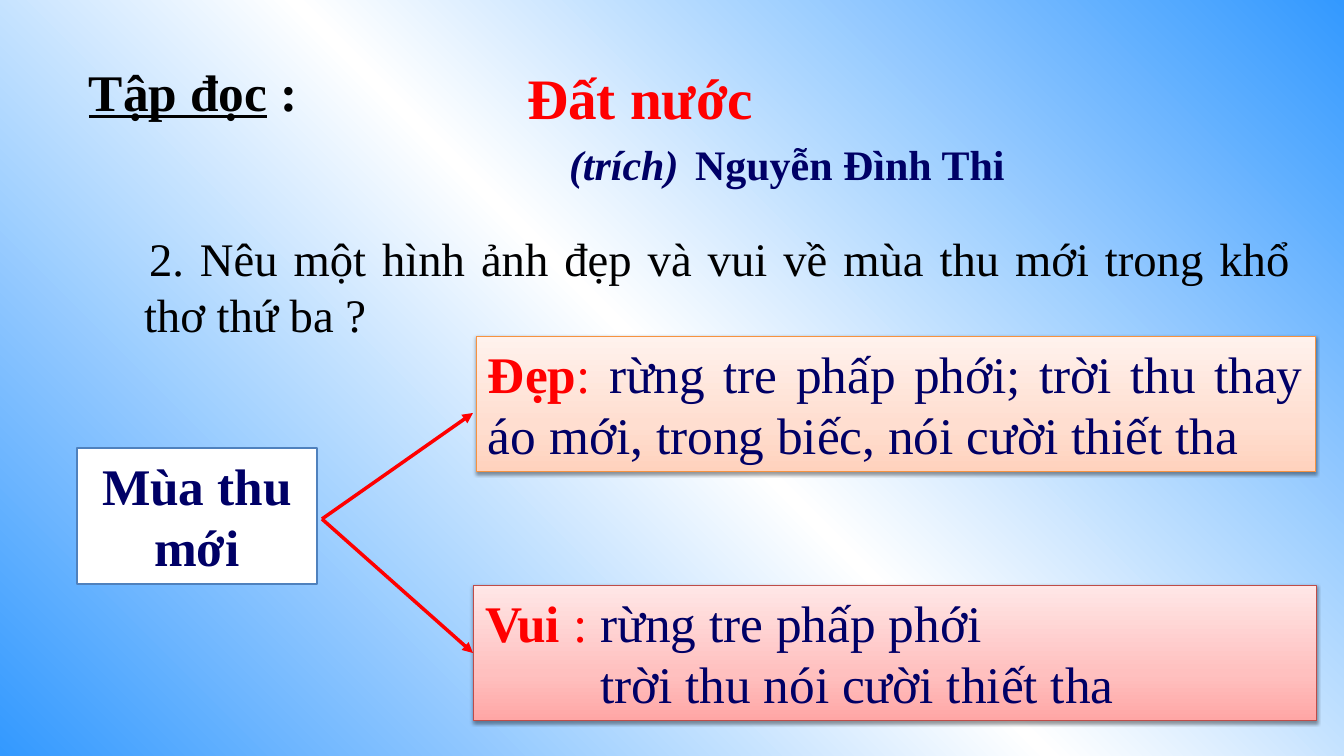
from copy import deepcopy
from lxml import etree
from pptx import Presentation
from pptx import util as u
from pptx.dml.color import RGBColor
from pptx.enum import shapes, text
from pptx.oxml.ns import qn

PX = u.Inches(1) / 84
FONT = "Times New Roman"
BLACK = RGBColor(0, 0, 0)
WHITE = RGBColor(255, 255, 255)
RED = RGBColor(255, 0, 0)
NAVY = RGBColor(0, 0, 0x66)
SKY = RGBColor(0x33, 0x99, 0xFF)
STEEL = RGBColor(0x4F, 0x81, 0xBD)
AMBER = RGBColor(0xF6, 0x92, 0x40)
BRICK = RGBColor(0xBF, 0x4C, 0x48)
PEACH = [RGBColor(0xFF, 0xD2, 0xBD), RGBColor(0xFF, 0xDE, 0xD0), RGBColor(0xFF, 0xF2, 0xED)]
ROSE = [RGBColor(0xFF, 0xA6, 0xA5), RGBColor(0xFF, 0xC0, 0xBF), RGBColor(0xFF, 0xE7, 0xE7)]
LEFT, MID, FULL = text.PP_ALIGN.LEFT, text.PP_ALIGN.CENTER, text.PP_ALIGN.JUSTIFY


def px(*vals):
    return [u.Emu(round(v * PX)) for v in vals]


def blend(fill, host, tones, middle, angle):
    fill.gradient()
    fill.gradient_angle = angle
    stops = next(host.iter(qn("a:gsLst")))
    stops.insert(1, deepcopy(stops[0]))
    for stop, tone, place in zip(fill.gradient_stops, tones, (0, middle, 1)):
        stop.color.rgb = tone
        stop.position = place


def shade(shape):
    effect = shape._element.spPr.find(qn("a:effectLst"))
    cast = etree.SubElement(effect, qn("a:outerShdw"), blurRad=str(u.Pt(3.1)),
                            dist=str(u.Pt(1.6)), dir="5400000", rotWithShape="0")
    tone = etree.SubElement(cast, qn("a:srgbClr"), val="000000")
    etree.SubElement(tone, qn("a:alpha"), val="38000")


def setup(shape):
    frame = shape.text_frame
    frame.word_wrap = True
    frame.auto_size = text.MSO_AUTO_SIZE.NONE
    frame.vertical_anchor = text.MSO_ANCHOR.TOP
    frame.margin_left, frame.margin_right, frame.margin_top, frame.margin_bottom = px(12, 12, 6, 6)
    return frame


def place(shape, box):
    shape.left, shape.top, shape.width, shape.height = px(*box)
    return setup(shape)


def write(para, runs, size, align, margin=0, indent=0, before=0):
    para.alignment = align
    para.space_before = u.Pt(before)
    para.font.name, para.font.size = FONT, u.Pt(size)
    props = para._p.get_or_add_pPr()
    margin, indent = px(margin, indent)
    props.set("marL", str(margin))
    props.set("indent", str(indent))
    props.insert_element_before(etree.Element(qn("a:buNone")), "a:tabLst", "a:defRPr")
    for words, color, bold in runs:
        run = para.add_run()
        run.text = words
        run.font.color.rgb, run.font.bold = color, bold


def head(slide, box):
    x, y, w, h = box
    label = slide.shapes.add_textbox(*px(x, y, 400, 74))
    para = setup(label).paragraphs[0]
    write(para, [("Tập đọc", BLACK, True), (" :", BLACK, True)], 44, LEFT)
    para.runs[0].font.underline = True

    frame = place(slide.shapes.title, (x + 438, y + 2, w - 438, h))
    write(frame.paragraphs[0], [("Đất nước", RED, True)], 49, LEFT)
    para = frame.add_paragraph()
    write(para, [("\t(trích)", NAVY, True), ("\tNguyễn Đình Thi", NAVY, True)], 36, LEFT, before=7)
    para.runs[0].font.italic = True
    tabs = etree.Element(qn("a:tabLst"))
    for stop in px(147, 351):
        etree.SubElement(tabs, qn("a:tab"), pos=str(stop), algn="l")
    para._p.pPr.insert_element_before(tabs, "a:defRPr")


def ask(slide, box):
    frame = place(slide.placeholders[1], box)
    words = "2. Nêu một hình ảnh đẹp và vui về mùa thu mới trong khổ thơ thứ ba ?"
    write(frame.paragraphs[0], [(words, BLACK, False)], 40, FULL, 45, 5, 8)


def card(slide, box, edge, width):
    shape = slide.shapes.add_shape(shapes.MSO_SHAPE.RECTANGLE, *px(*box))
    shape.shadow.inherit = False
    shape.line.color.rgb, shape.line.width = edge, u.Pt(width)
    setup(shape)
    return shape


def reply(slide, box, edge, tones, lines):
    shape = card(slide, box, edge, 0.75)
    blend(shape.fill, shape._element, tones, 0.35, 90)
    shade(shape)
    frame = shape.text_frame
    for i, (runs, margin) in enumerate(lines):
        para = frame.add_paragraph() if i else frame.paragraphs[0]
        write(para, runs, 44, FULL, margin)
    return shape


def arrow(slide, start, end):
    line = slide.shapes.add_connector(shapes.MSO_CONNECTOR.STRAIGHT, *px(*start, *end))
    line.line.color.rgb, line.line.width = RED, u.Pt(3)
    etree.SubElement(line.line._get_or_add_ln(), qn("a:tailEnd"), type="triangle")
    etree.SubElement(line._element.spPr, qn("a:effectLst"))
    return line


def chart(slide, box):
    x, y, w, h = box
    reply(slide, (x + 399, y, w - 399, 136), AMBER, PEACH, [
        ([("Đẹp", RED, True), (": ", RED, False),
          ("rừng tre phấp phới; trời thu thay áo mới, trong biếc, nói cười thiết tha", NAVY, False)], 0)])
    joy = reply(slide, (x + 396, y + h - 136, w - 396, 136), BRICK, ROSE, [
        ([("Vui", RED, True), (" : ", RED, False), ("rừng tre phấp phới", NAVY, False)], 0),
        ([("trời thu nói cười thiết tha", NAVY, False)], 115)])
    root = card(slide, (x, y + 112, 240, 136), STEEL, 2)
    root.fill.solid()
    root.fill.fore_color.rgb = WHITE
    write(root.text_frame.paragraphs[0], [("Mùa thu mới", NAVY, True)], 44, MID)
    fork = (x + 245, y + 183)
    arrow(slide, fork, (x + 396, y + 77))
    arrow(slide, fork, (x + 396, y + h - 68)).end_connect(joy, 1)


def main():
    deck = Presentation()
    deck.slide_width, deck.slide_height = px(1344, 756)
    slide = deck.slides.add_slide(deck.slide_layouts[1])
    blend(slide.background.fill, slide._element, [SKY, WHITE, SKY], 0.5, 45)
    ask(slide, (87, 224, 1215, 119))
    chart(slide, (77, 336, 1239, 385))
    head(slide, (77, 54, 1267, 170))
    deck.save("out.pptx")


if __name__ == "__main__":
    main()
